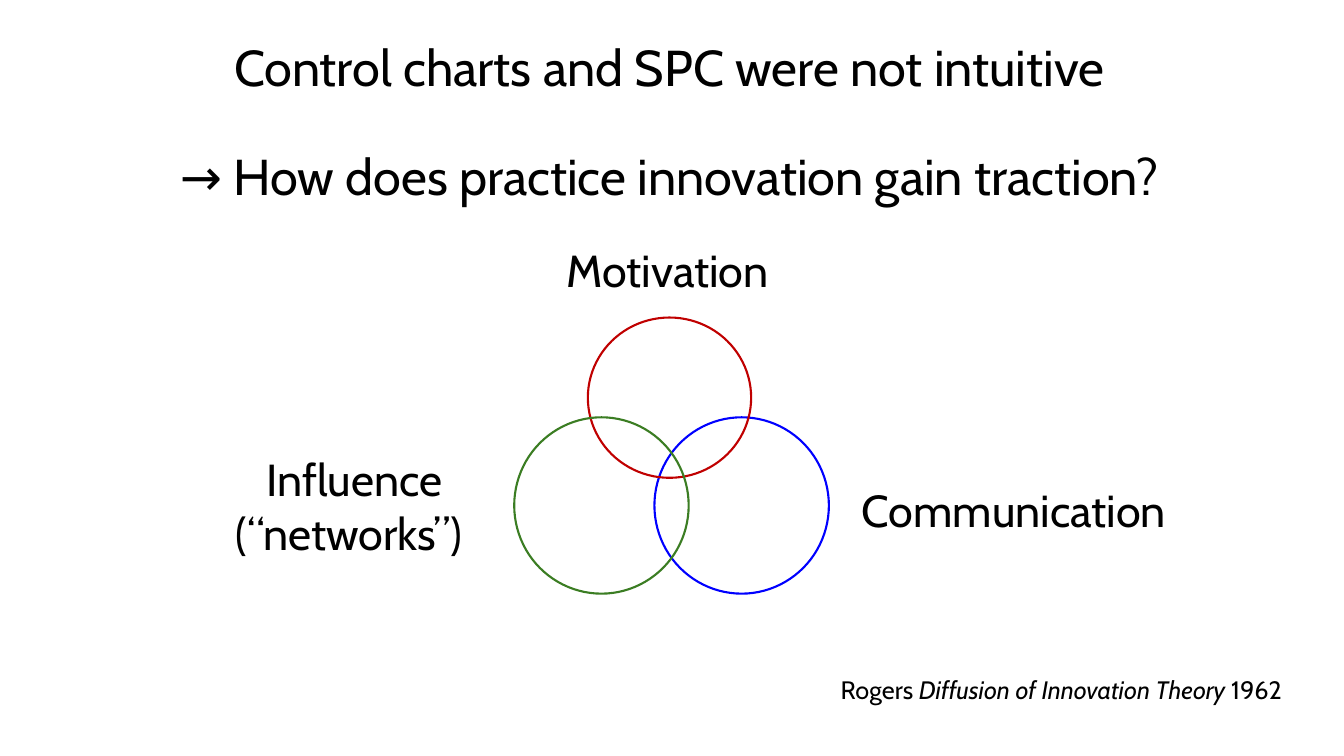
from dataclasses import dataclass

from pptx import Presentation
from pptx import util as u
from pptx.dml.color import RGBColor
from pptx.enum import shapes, text

WIDTH, HEIGHT = u.Inches(13.33), u.Inches(7.5)


@dataclass(frozen=True)
class Theme:
    font: str = "Cabin"
    ink: str = "000000"
    red: str = "C00000"
    green: str = "3B7D23"
    blue: str = "0000FF"
    title: int = 36
    label: int = 32
    citation: int = 18
    outline: float = 1.5


THEME = Theme()


def area(left, top, width, height):
    return (
        round(WIDTH * left / 100),
        round(HEIGHT * top / 100),
        round(WIDTH * width / 100),
        round(HEIGHT * height / 100),
    )


def style(span, size, italic=False):
    span.font.name = THEME.font
    span.font.size = u.Pt(size)
    span.font.color.rgb = RGBColor.from_string(THEME.ink)
    span.font.italic = italic


def add_text(page, place, content, size, align=text.PP_ALIGN.LEFT, wrap=False):
    box = page.shapes.add_textbox(*area(*place))
    frame = box.text_frame
    frame.word_wrap = wrap
    frame.auto_size = text.MSO_AUTO_SIZE.SHAPE_TO_FIT_TEXT
    frame.text = content
    for para in frame.paragraphs:
        para.alignment = align
        for span in para.runs:
            style(span, size)
    return box


def add_title(page, place, content):
    box = add_text(page, place, content, THEME.title, text.PP_ALIGN.CENTER, True)
    frame = box.text_frame
    frame.auto_size = text.MSO_AUTO_SIZE.NONE
    frame.vertical_anchor = text.MSO_ANCHOR.MIDDLE
    for para in frame.paragraphs:
        para.line_spacing = 0.9
    frame.paragraphs[-1].space_before = u.Pt(39)


def add_citation(page, place, author, work, year):
    box = add_text(page, place, author, THEME.citation)
    para = box.text_frame.paragraphs[0]
    for content, italic in ((work, True), (year, False)):
        span = para.add_run()
        span.text = content
        style(span, THEME.citation, italic)


def add_circle(page, place, color):
    circle = page.shapes.add_shape(shapes.MSO_SHAPE.OVAL, *area(*place))
    circle.shadow.inherit = False
    circle.fill.background()
    circle.line.color.rgb = RGBColor.from_string(color)
    circle.line.width = u.Pt(THEME.outline)


def main():
    deck = Presentation()
    deck.slide_width, deck.slide_height = WIDTH, HEIGHT
    page = deck.slides.add_slide(deck.slide_layouts[6])

    add_title(
        page,
        (5.18, 2.4, 90.1, 28.13),
        "Control charts and SPC were not intuitive \n"
        "→ How does practice innovation gain traction? ",
    )
    add_text(page, (41.41, 31.47, 16.8, 8.53), "Motivation", THEME.label)
    add_text(
        page, (14.78, 59.07, 23.18, 15.73), "Influence (“networks”) ",
        THEME.label, text.PP_ALIGN.CENTER, True,
    )
    add_text(page, (63.39, 63.2, 25.06, 8.53), "Communication", THEME.label)
    add_citation(
        page, (61.82, 88.53, 36.01, 5.33),
        "Rogers ", "Diffusion of Innovation Theory ", "1962",
    )

    add_circle(page, (48.69, 55.2, 12.98, 23.33), THEME.blue)
    add_circle(page, (43.74, 42, 12.15, 21.2), THEME.red)
    add_circle(page, (38.26, 55.2, 12.98, 23.33), THEME.green)
    deck.save("out.pptx")


if __name__ == "__main__":
    main()
